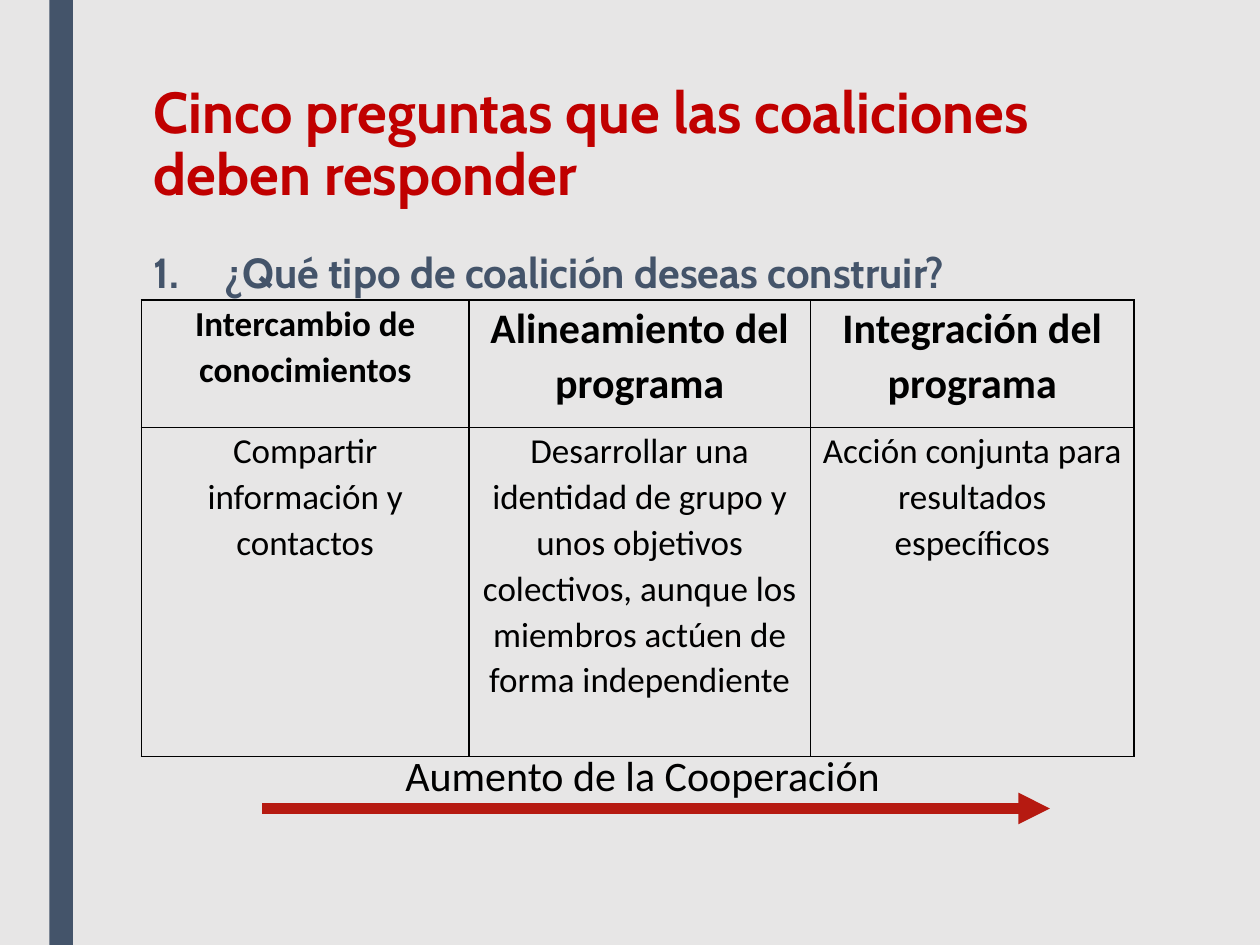
"""Build the slide on the five questions that coalitions must answer."""
import pptx
import pptx.util
import pptx.dml.color
import pptx.enum.shapes
import pptx.enum.text
import pptx.oxml
import pptx.oxml.ns
import lxml.etree

Pt = pptx.util.Pt
ALIGN = pptx.enum.text.PP_ALIGN
qn = pptx.oxml.ns.qn


def tint(code):
    return pptx.dml.color.RGBColor.from_string(code)


def write(frame, text, size, face, color, bold=False, align=ALIGN.LEFT, space=1.0):
    frame.word_wrap = True
    para = frame.paragraphs[0]
    para.alignment = align
    para.line_spacing = space
    run = para.add_run()
    run.text = text
    run.font.size = Pt(size)
    run.font.name = face
    run.font.bold = bold
    run.font.color.rgb = tint(color)
    return para


deck = pptx.Presentation()
deck.slide_width, deck.slide_height = Pt(720), Pt(540)
slide = deck.slides.add_slide(deck.slide_layouts[6])
slide.background.fill.solid()
slide.background.fill.fore_color.rgb = tint("E7E6E6")
shapes = slide.shapes

band = shapes.add_shape(pptx.enum.shapes.MSO_SHAPE.RECTANGLE, Pt(28.2), 0, Pt(13.5), Pt(540))
band.shadow.inherit = False
band.fill.solid()
band.fill.fore_color.rgb = tint("44546A")
band.line.fill.background()

title = shapes.add_textbox(Pt(80.8), Pt(44.6), Pt(591), Pt(117.4))
write(title.text_frame, "Cinco preguntas que las coaliciones deben responder",
      33, "Cabin", "C00000", True, space=0.89)

query = shapes.add_textbox(Pt(80.8), Pt(139.7), Pt(567.4), Pt(282))
para = write(query.text_frame, "¿Qué tipo de coalición deseas construir?",
             24, "Cabin", "44546A", True, space=0.94)
para.space_after = Pt(2)
props = para._p.get_or_add_pPr()
props.set("marL", str(Pt(40.5)))
props.set("indent", str(Pt(-40.5)))
lxml.etree.SubElement(props, qn("a:buFont"), typeface="+mj-lt")
lxml.etree.SubElement(props, qn("a:buAutoNum"), type="arabicPeriod")

wide = [187.2, 195.1, 185]
high = [72.8, 188]
rows = [
    [("Intercambio de conocimientos", 20), ("Alineamiento del programa", 24),
     ("Integración del programa", 24)],
    [("Compartir información y contactos", 20),
     ("Desarrollar una identidad de grupo y unos objetivos colectivos, "
      "aunque los miembros actúen de forma independiente", 20),
     ("Acción conjunta para resultados específicos", 20)],
]
table = shapes.add_table(2, 3, Pt(80.8), Pt(171.4), Pt(sum(wide)), Pt(sum(high))).table
for col, width in zip(table.columns, wide):
    col.width = Pt(width)
for r, row in enumerate(rows):
    table.rows[r].height = Pt(high[r])
    for c, (text, size) in enumerate(row):
        cell = table.cell(r, c)
        cell.margin_left = cell.margin_right = Pt(5)
        cell.margin_top = cell.margin_bottom = 0
        write(cell.text_frame, text, size, "Calibri", "000000", r == 0, ALIGN.CENTER, 1.07)
        props = cell._tc.get_or_add_tcPr()
        for side in ("lnL", "lnR", "lnT", "lnB"):
            edge = lxml.etree.SubElement(props, qn("a:" + side), w=str(Pt(1)))
            fill = lxml.etree.SubElement(edge, qn("a:solidFill"))
            lxml.etree.SubElement(fill, qn("a:srgbClr"), val="000000")
        cell.fill.background()

arrow = shapes.add_connector(pptx.enum.shapes.MSO_CONNECTOR.STRAIGHT,
                             Pt(150), Pt(462), Pt(600), Pt(462))
arrow.line.color.rgb = tint("B61A11")
arrow.line.width = Pt(6)
lxml.etree.SubElement(arrow.line._get_or_add_ln(), qn("a:tailEnd"), type="triangle")
lxml.etree.SubElement(arrow._element.spPr, qn("a:effectLst"))

label = shapes.add_textbox(Pt(191.5), Pt(424.8), Pt(351.4), Pt(37.4))
write(label.text_frame, "Aumento de la Cooperación", 24, "Calibri", "000000", align=ALIGN.CENTER)
label.text_frame.auto_size = pptx.enum.text.MSO_AUTO_SIZE.SHAPE_TO_FIT_TEXT

deck.save("out.pptx")
